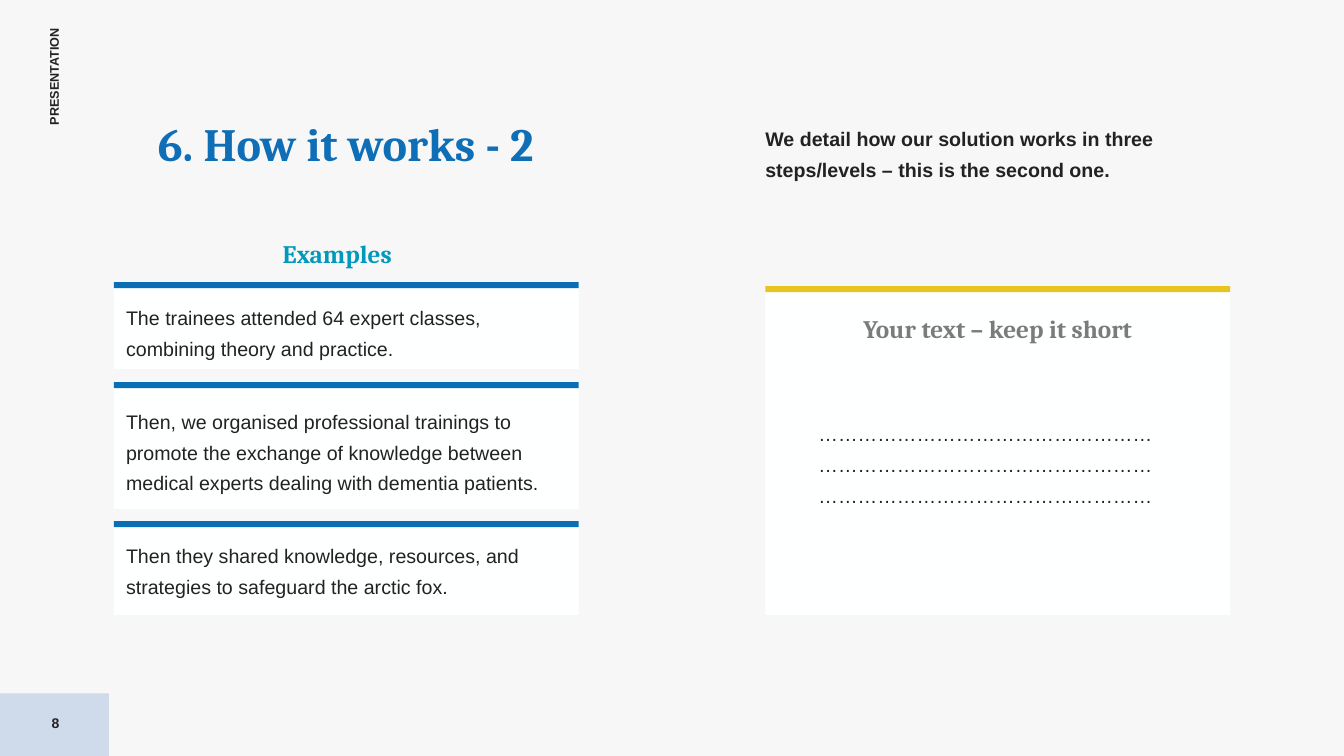
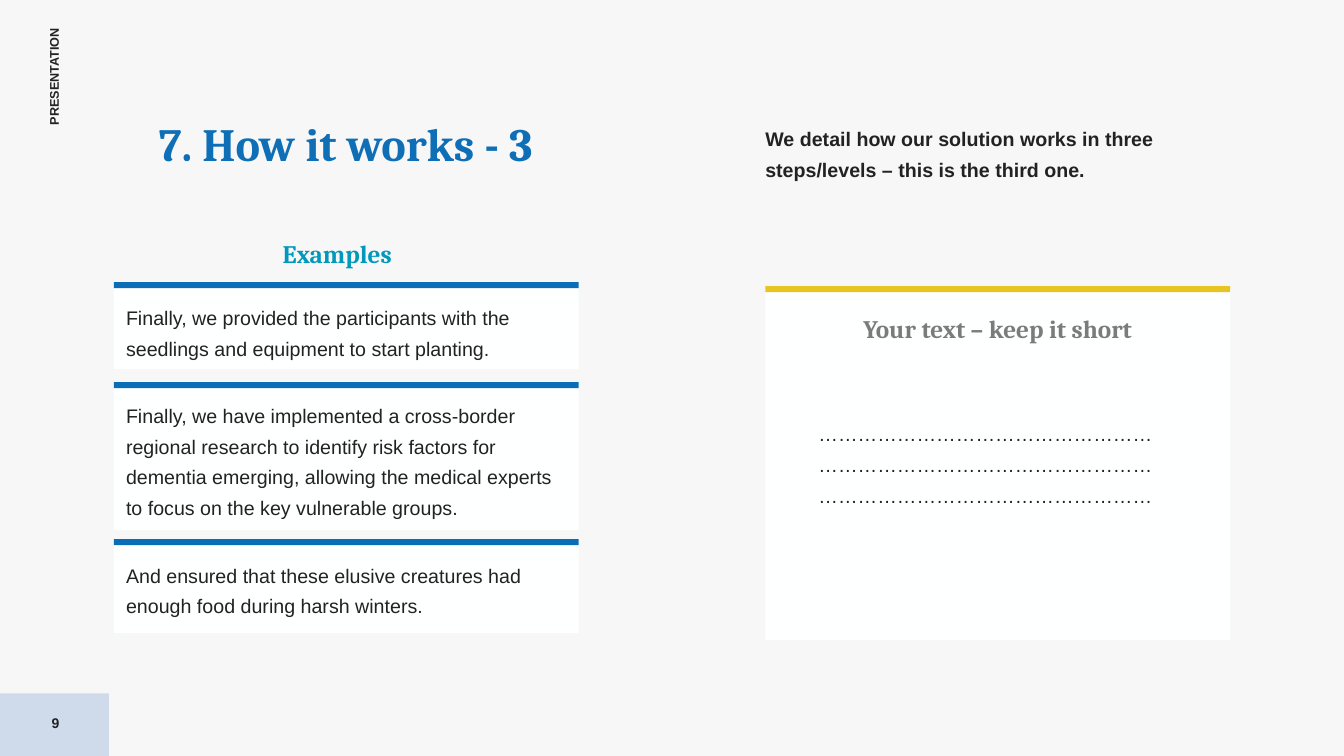
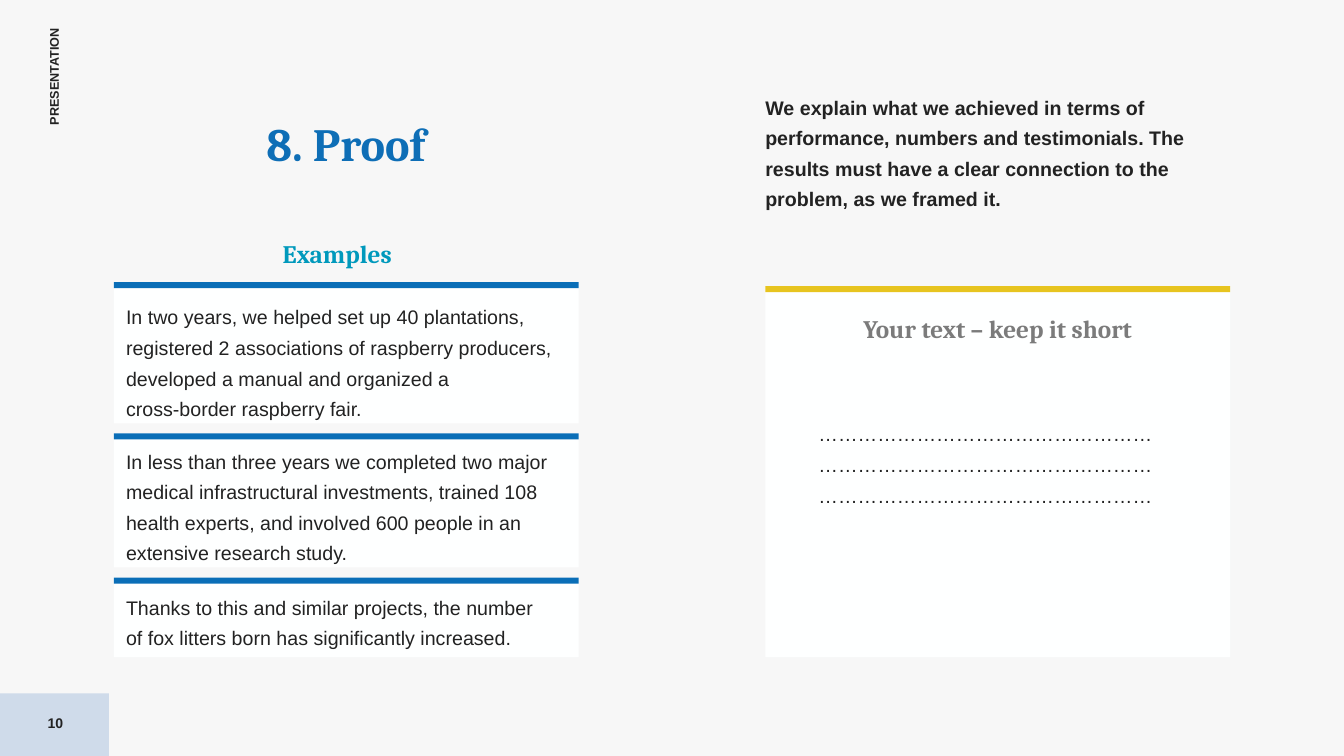
from pptx import Presentation
from pptx.dml.color import RGBColor
from pptx.enum.shapes import MSO_SHAPE
from pptx.enum.text import MSO_ANCHOR, MSO_AUTO_SIZE, PP_ALIGN
from pptx.util import Inches, Pt

RECTANGLE = MSO_SHAPE.RECTANGLE
TOP, MIDDLE = MSO_ANCHOR.TOP, MSO_ANCHOR.MIDDLE
LEFT, CENTER = PP_ALIGN.LEFT, PP_ALIGN.CENTER
FIT_SHAPE = MSO_AUTO_SIZE.SHAPE_TO_FIT_TEXT

COLORS = {
    "background": "F7F7F7",
    "corner": "CFDBEA",
    "text": "222222",
    "title": "0E6EB6",
    "examples": "0099BC",
    "prompt": "7B7B7B",
    "card": "FEFFFF",
    "example_bar": "0A6EB7",
    "prompt_bar": "E7C41F",
}
BODY_FONT, HEADING_FONT = "Arial", "Cambria"
BODY_INSETS = (0, 0.04, 0.24, 0.04)
LABEL_INSETS = (0.1, 0.05, 0.1, 0.05)
NO_INSETS = (0, 0, 0, 0)
LEFT_COLUMN, RIGHT_COLUMN, COLUMN_WIDTH = 1.13, 7.59, 4.61
BAR_HEIGHT = 0.06
PROMPT_TOP = 2.84
DOTS_PER_LINE, DOT_LINES = 17, 3


def body_height(lines):
    return round(0.05 + 0.305 * lines, 2)


class Deck:
    def __init__(self):
        self.presentation = Presentation()
        self.presentation.slide_width = Inches(13.33)
        self.presentation.slide_height = Inches(7.5)
        self.slide = None

    def rectangle(self, left, top, width, height, color):
        shape = self.slide.shapes.add_shape(
            RECTANGLE, Inches(left), Inches(top), Inches(width), Inches(height))
        shape.shadow.inherit = False
        shape.fill.solid()
        shape.fill.fore_color.rgb = RGBColor.from_string(COLORS[color])
        shape.line.fill.background()

    def text(self, left, top, width, height, content, size, font=BODY_FONT,
             color="text", bold=True, align=LEFT, anchor=TOP,
             insets=BODY_INSETS, spacing=1.3, grow=True, rotation=0):
        shape = self.slide.shapes.add_textbox(
            Inches(left), Inches(top), Inches(width), Inches(height))
        shape.rotation = rotation
        frame = shape.text_frame
        frame.word_wrap = True
        if grow:
            frame.auto_size = FIT_SHAPE
        frame.vertical_anchor = anchor
        (frame.margin_left, frame.margin_top,
         frame.margin_right, frame.margin_bottom) = map(Inches, insets)
        frame.text = content
        paragraph = frame.paragraphs[0]
        paragraph.alignment = align
        paragraph.line_spacing = spacing
        for run in paragraph.runs:
            run.font.name = font
            run.font.size = Pt(size)
            run.font.bold = bold
            run.font.color.rgb = RGBColor.from_string(COLORS[color])

    def start_slide(self, number):
        self.slide = self.presentation.slides.add_slide(
            self.presentation.slide_layouts[6])
        fill = self.slide.background.fill
        fill.solid()
        fill.fore_color.rgb = RGBColor.from_string(COLORS["background"])
        self.rectangle(0, 6.88, 1.08, 0.62, "corner")
        self.text(-0.06, 0.62, 1.19, 0.25, "PRESENTATION", 9,
                  insets=LABEL_INSETS, spacing=1.0, rotation=270)
        self.text(0, 6.97, 1.1, 0.4, str(number), 10, align=CENTER,
                  anchor=MIDDLE, insets=LABEL_INSETS, spacing=1.0, grow=False)

    def title(self, content):
        self.text(LEFT_COLUMN, 1.04, 4.6, 0.89, content, 33, HEADING_FONT,
                  "title", align=CENTER, insets=(0, 0.21, 0, 0), spacing=0.8,
                  grow=False)

    def intro(self, content, top, lines):
        self.text(RIGHT_COLUMN, top, COLUMN_WIDTH, body_height(lines), content, 14)

    def heading(self, left, top, content, color):
        self.text(left, top, 3.45, 0.35, content, 18, HEADING_FONT, color,
                  align=CENTER, anchor=MIDDLE, insets=NO_INSETS)

    def card(self, left, top, height, bar_color):
        self.rectangle(left, top, COLUMN_WIDTH, height, "card")
        self.rectangle(left, top, COLUMN_WIDTH, BAR_HEIGHT, bar_color)

    def prompt(self, height):
        self.card(RIGHT_COLUMN, PROMPT_TOP, height, "prompt_bar")
        self.heading(8.17, 3.04, "Your text – keep it short", "prompt")
        self.text(8.08, 4.08, 3.63, body_height(DOT_LINES),
                  "…" * (DOTS_PER_LINE * DOT_LINES), 14, bold=False, align=CENTER)

    def example(self, top, height, text_top, lines, content):
        self.card(LEFT_COLUMN, top, height, "example_bar")
        self.text(1.25, text_top, 4.48, body_height(lines), content, 14, bold=False)


SLIDES = [
    {
        "number": 8,
        "title": "6. How it works - 2",
        "intro": ("We detail how our solution works in three steps/levels – "
                  "this is the second one.", 1.15, 2),
        "prompt_height": 3.26,
        "examples": [
            (2.8, 0.86, 2.93, 2, "The trainees attended 64 expert classes, "
             "combining theory and practice."),
            (3.79, 1.26, 3.96, 3, "Then, we organised professional trainings to "
             "promote the exchange of knowledge between medical experts dealing "
             "with dementia patients."),
            (5.17, 0.93, 5.29, 2, "Then they shared knowledge, resources, and "
             "strategies to safeguard the arctic fox."),
        ],
    },
    {
        "number": 9,
        "title": "7. How it works - 3",
        "intro": ("We detail how our solution works in three steps/levels – "
                  "this is the third one.", 1.15, 2),
        "prompt_height": 3.51,
        "examples": [
            (2.8, 0.86, 2.93, 2, "Finally, we provided the participants with the "
             "seedlings and equipment to start planting."),
            (3.79, 1.47, 3.9, 4, "Finally, we have implemented a cross-border "
             "regional research to identify risk factors for dementia emerging, "
             "allowing the medical experts to focus on the key vulnerable groups."),
            (5.35, 0.93, 5.48, 2, "And ensured that these elusive creatures had "
             "enough food during harsh winters."),
        ],
    },
    {
        "number": 10,
        "title": "8. Proof",
        "intro": ("We explain what we achieved in terms of performance, numbers "
                  "and testimonials. The results must have a clear connection to "
                  "the problem, as we framed it.", 0.84, 4),
        "prompt_height": 3.68,
        "examples": [
            (2.8, 1.4, 2.92, 4, "In two years, we helped set up 40 plantations, "
             "registered 2 associations of raspberry producers, developed a manual "
             "and organized a\vcross-border raspberry fair."),
            (4.3, 1.33, 4.35, 4, "In less than three years we completed two major "
             "medical infrastructural investments, trained 108 health experts, and "
             "involved 600 people in an extensive research study."),
            (5.73, 0.79, 5.8, 2, "Thanks to this and similar projects, the number "
             "of fox litters born has significantly increased."),
        ],
    },
]


def main():
    deck = Deck()
    for content in SLIDES:
        deck.start_slide(content["number"])
        deck.intro(*content["intro"])
        deck.title(content["title"])
        deck.prompt(content["prompt_height"])
        deck.heading(1.62, 2.29, "Examples", "examples")
        for example in content["examples"]:
            deck.example(*example)
    deck.presentation.save("out.pptx")


if __name__ == "__main__":
    main()
